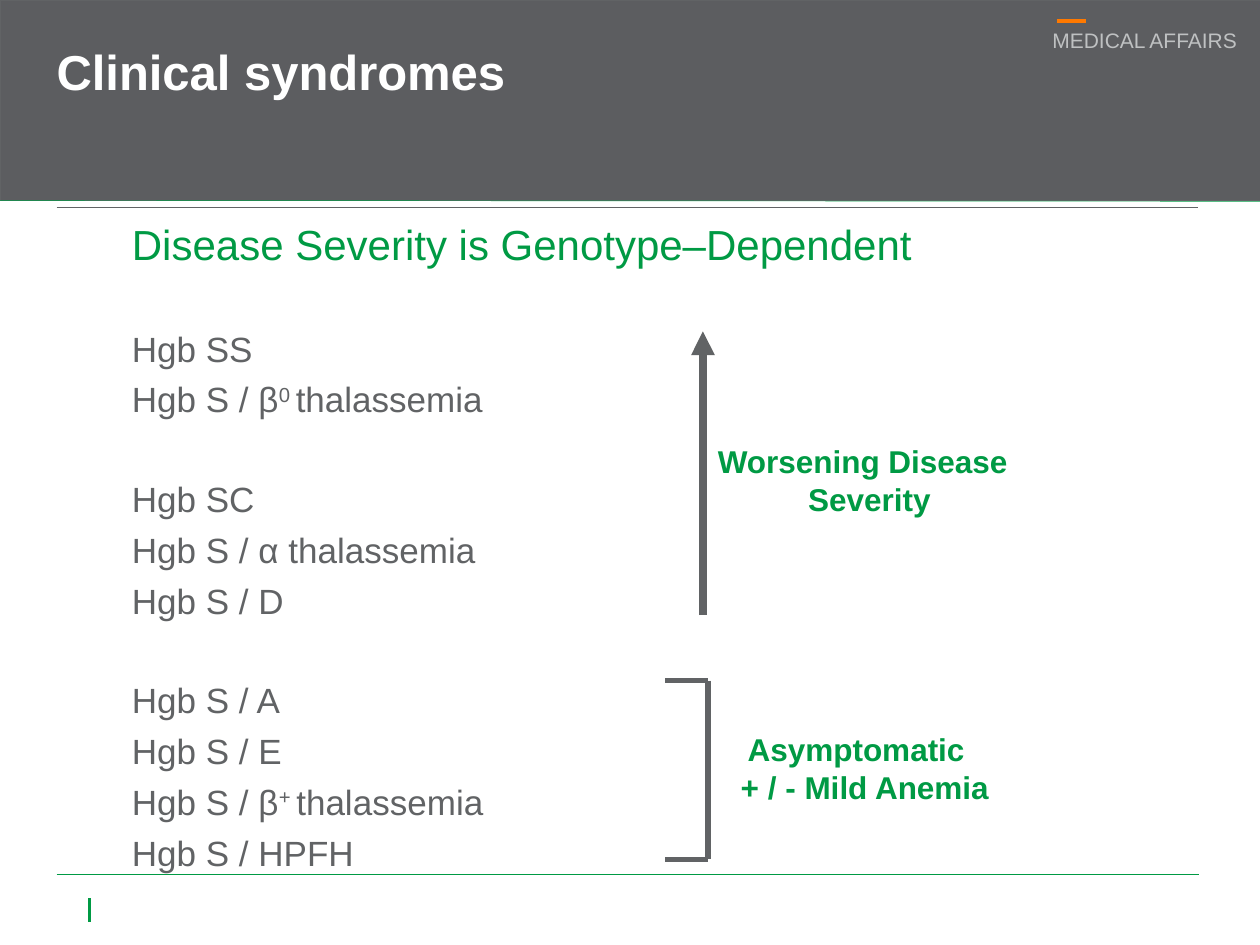
import pptx
import pptx.util
import pptx.dml.color
import pptx.enum.shapes
import pptx.enum.text
import pptx.oxml.ns
from lxml import etree

Cm, Pt = pptx.util.Cm, pptx.util.Pt
ALIGN = pptx.enum.text.PP_ALIGN
qn = pptx.oxml.ns.qn

# Content: groups of genotypes, each line a list of (text, superscript) runs
COLORS = {"band": "5C5D60", "gray": "616365", "green": "009A44",
          "orange": "FF7900", "light": "BFC1C2", "white": "FFFFFF"}
TITLE = "Clinical syndromes"
TAG = "MEDICAL AFFAIRS"
HEADING = "Disease Severity is Genotype–Dependent"
GROUPS = [
    [[("Hgb SS", False)],
     [("Hgb S / β", False), ("0 ", True), ("thalassemia", False)]],
    [[("Hgb SC", False)], [("Hgb S / α thalassemia", False)], [("Hgb S / D", False)]],
    [[("Hgb S / A", False)], [("Hgb S / E", False)],
     [("Hgb S / β", False), ("+ ", True), ("thalassemia", False)],
     [("Hgb S / HPFH", False)]],
]
# Labels: box, then (text, alignment, left margin)
LABELS = [
    ((14.22, 8.79, 6.43, 1.8), [("Worsening Disease", ALIGN.LEFT, 0),
                                ("Severity", ALIGN.CENTER, 0.18)]),
    ((14.3, 14.6, 5.92, 1.8), [("Asymptomatic", ALIGN.CENTER, 0),
                               ("+ / - Mild Anemia", ALIGN.CENTER, 0.35)]),
]
# Rules: x1, y1, x2, y2, colour, width
RULES = [
    (1.14, 17.63, 24.18, 17.63, "green", 0.25),
    (0, 4.04, 25.4, 4.06, "green", 0.25),
    (21.31, 0.43, 21.89, 0.43, "orange", 2.25),
    (1.8, 18.11, 1.8, 18.59, "green", 1.5),
    (1.14, 4.17, 24.16, 4.17, "gray", 0.25),
]
LEFT, RIGHT, TOP, BOTTOM = 13.41, 14.27, 13.72, 17.32
BRACKET = [(LEFT, TOP, RIGHT, TOP), (RIGHT, TOP, RIGHT, BOTTOM),
           (LEFT, BOTTOM, RIGHT, BOTTOM)]
SEVERITY_ARROW = (14.17, 12.4, 14.17, 6.68)


def rgb(name):
    return pptx.dml.color.RGBColor.from_string(COLORS[name])


def add_run(p, text, size, color, bold=False, raised=False):
    r = p.add_run()
    r.text = text
    r.font.name, r.font.size, r.font.bold = "Arial", Pt(size), bold
    r.font.color.rgb = rgb(color)
    if raised:
        r.font._element.set("baseline", "30000")


def set_frame(tf, margins=True):
    tf.word_wrap = True
    tf.vertical_anchor = pptx.enum.text.MSO_ANCHOR.TOP
    if not margins:
        tf.margin_left = tf.margin_right = tf.margin_top = tf.margin_bottom = 0


def add_text(s, box, margins=True):
    tf = s.shapes.add_textbox(*map(Cm, box)).text_frame
    set_frame(tf, margins)
    return tf


def add_line(s, x1, y1, x2, y2, color, width):
    line = s.shapes.add_connector(pptx.enum.shapes.MSO_CONNECTOR.STRAIGHT,
                                  Cm(x1), Cm(y1), Cm(x2), Cm(y2))
    line.line.color.rgb = rgb(color)
    line.line.width = Pt(width)
    etree.SubElement(line._element.spPr, qn("a:effectLst"))
    return line


def main():
    prs = pptx.Presentation()
    prs.slide_width, prs.slide_height = Cm(25.4), Cm(19.05)
    s = prs.slides.add_slide(prs.slide_layouts[5])

    # Header band, tag and rules
    band = s.shapes.add_shape(pptx.enum.shapes.MSO_SHAPE.RECTANGLE,
                              0, 0, prs.slide_width, Cm(4.04))
    band.shadow.inherit = False
    band.fill.solid()
    band.fill.fore_color.rgb = rgb("band")
    band.line.color.rgb = rgb("gray")
    band.line.width = Pt(0.25)
    p = add_text(s, (21.13, 0.61, 3.81, 0.46), margins=False).paragraphs[0]
    p.alignment, p.line_spacing = ALIGN.RIGHT, 0.9
    add_run(p, TAG, 12, "light")
    for rule in RULES:
        add_line(s, *rule)

    # Title, raised above the band
    title = s.shapes.title
    s.shapes.element.append(title.element)
    title.left, title.top, title.width, title.height = map(Cm, (1.14, 0.97, 23.16, 3.48))
    set_frame(title.text_frame, margins=False)
    p = title.text_frame.paragraphs[0]
    p.alignment, p.line_spacing = ALIGN.LEFT, 0.9
    add_run(p, TITLE, 28, "white", bold=True)

    # Genotype list: wider space opens each group
    tf = add_text(s, (2.41, 4.29, 20.12, 13.84))
    add_run(tf.paragraphs[0], HEADING, 24, "green")
    for group in GROUPS:
        for i, runs in enumerate(group):
            p = tf.add_paragraph()
            p.space_before = Pt(5 if i else 33)
            for text, raised in runs:
                add_run(p, text, 20, "gray", raised=raised)

    # Severity arrow and bracket
    arrow = add_line(s, *SEVERITY_ARROW, "gray", 4.5)
    etree.SubElement(arrow.line._get_or_add_ln(), qn("a:tailEnd"), type="triangle")
    group = s.shapes.add_group_shape()
    for x1, y1, x2, y2 in BRACKET:
        side = group.shapes.add_connector(pptx.enum.shapes.MSO_CONNECTOR.STRAIGHT,
                                          Cm(x1), Cm(y1), Cm(x2), Cm(y2))
        side.line.color.rgb = rgb("gray")
        side.line.width = Pt(3)
        etree.SubElement(side._element.spPr, qn("a:effectLst"))

    # Labels
    for box, lines in LABELS:
        tf = add_text(s, box)
        for i, (text, align, margin) in enumerate(lines):
            p = tf.add_paragraph() if i else tf.paragraphs[0]
            p.alignment = align
            p._p.get_or_add_pPr().set("marL", str(Cm(margin)))
            add_run(p, text, 18, "green", bold=True)

    prs.save("out.pptx")


if __name__ == "__main__":
    main()
